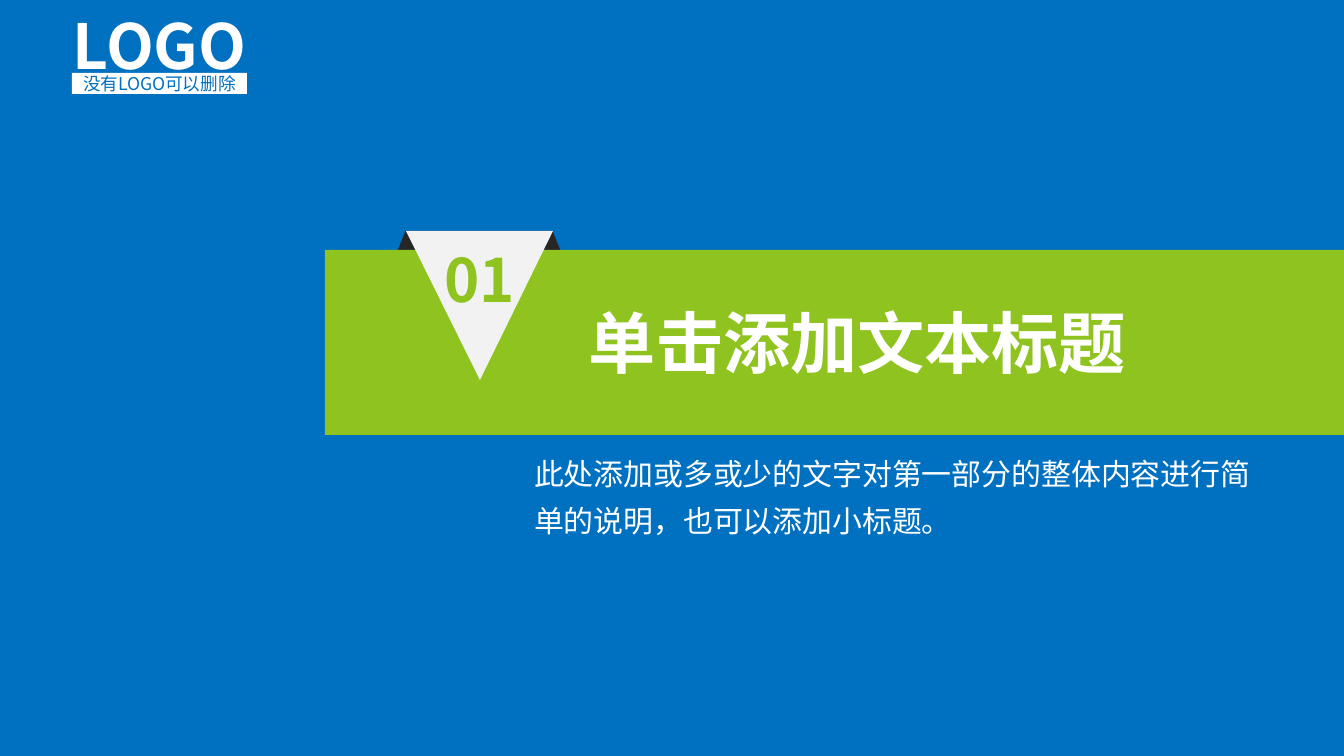
from dataclasses import dataclass

from lxml.etree import SubElement
from pptx import Presentation
from pptx.dml.color import RGBColor
from pptx.enum.shapes import MSO_SHAPE as Shape
from pptx.enum.text import MSO_ANCHOR as Anchor, PP_ALIGN as Align
from pptx.oxml.ns import qn
from pptx.util import Pt

PX = 914400 / 121
WIDTH, HEIGHT = 1344, 756


@dataclass(frozen=True)
class Theme:
    font: str = "Noto Sans CJK SC"
    blue: str = "0070C0"
    green: str = "8FC31F"
    pale: str = "F2F2F2"
    dark: str = "262626"
    white: str = "FFFFFF"
    title: float = 40
    number: float = 35.6
    body: float = 17.8
    mark: float = 37
    caption: float = 10.5


THEME = Theme()


def emu(px):
    return round(px * PX)


def paint(shape, color):
    """Give a shape a flat fill with no line or shadow."""
    shape.shadow.inherit = False
    shape.fill.solid()
    shape.fill.fore_color.rgb = RGBColor.from_string(color)
    shape.line.fill.background()
    return shape


def add_block(page, kind, *place, color):
    return paint(page.shapes.add_shape(kind, *map(emu, place)), color)


def add_pennant(page, left, top, width, height, color):
    """Draw a triangle that points down."""
    outline = page.shapes.build_freeform(left, top, scale=PX)
    outline.add_line_segments(
        [(left + width, top), (left + width / 2, top + height)], close=True)
    return paint(outline.convert_to_shape(), color)


def write(shape, text, size, color, bold=False, align=Align.LEFT,
          anchor=Anchor.TOP, margins=(12, 6, 12, 6)):
    """Fill a shape with one styled paragraph and return it."""
    frame = shape.text_frame
    frame.text = text
    frame.word_wrap = True
    frame.vertical_anchor = anchor
    (frame.margin_left, frame.margin_top,
     frame.margin_right, frame.margin_bottom) = map(emu, margins)
    para = frame.paragraphs[0]
    para.alignment = align
    span = para.runs[0]
    span.font.name = THEME.font
    span.font.size = Pt(size)
    span.font.bold = bold
    span.font.color.rgb = RGBColor.from_string(color)
    SubElement(span.font._element, qn("a:ea"), typeface=THEME.font)
    return para


def add_text(page, *place, **style):
    return write(page.shapes.add_textbox(*map(emu, place)), **style)


def add_banner(page):
    add_block(page, Shape.RECTANGLE, 0, 0, WIDTH, HEIGHT, color=THEME.blue)
    fold = add_block(page, Shape.TRAPEZOID, 393, 231, 172, 31, color=THEME.dark)
    fold.adjustments[0] = 0.4
    add_block(page, Shape.RECTANGLE, 325, 250, WIDTH - 325, 185, color=THEME.green)
    pennant = add_pennant(page, 406, 231, 147, 149, THEME.pale)
    number = write(pennant, "01", THEME.number, THEME.green, bold=True,
                   align=Align.CENTER, anchor=Anchor.MIDDLE,
                   margins=(12, 0, 12, 53))
    number.space_before = Pt(26.7)


def add_placeholder_mark(page):
    centred = dict(align=Align.CENTER, anchor=Anchor.MIDDLE, margins=(0, 0, 0, 0))
    add_text(page, 66, 18, 187, 54, text="LOGO", size=THEME.mark,
             color=THEME.white, bold=True, **centred)
    bar = add_block(page, Shape.RECTANGLE, 72, 73, 175, 21, color=THEME.white)
    write(bar, "没有LOGO可以删除", THEME.caption, THEME.blue, **centred)


def main():
    deck = Presentation()
    deck.slide_width, deck.slide_height = emu(WIDTH), emu(HEIGHT)
    page = deck.slides.add_slide(deck.slide_layouts[6])
    add_banner(page)
    body = add_text(page, 522, 439, 765, 106, size=THEME.body, color=THEME.white,
                    text="此处添加或多或少的文字对第一部分的整体内容进行简单的说明，也可以添加小标题。")
    body.line_spacing = 1.3
    add_text(page, 577, 295, 567, 93, text="单击添加文本标题",
             size=THEME.title, color=THEME.white, bold=True)
    add_placeholder_mark(page)
    deck.save("out.pptx")


if __name__ == "__main__":
    main()
